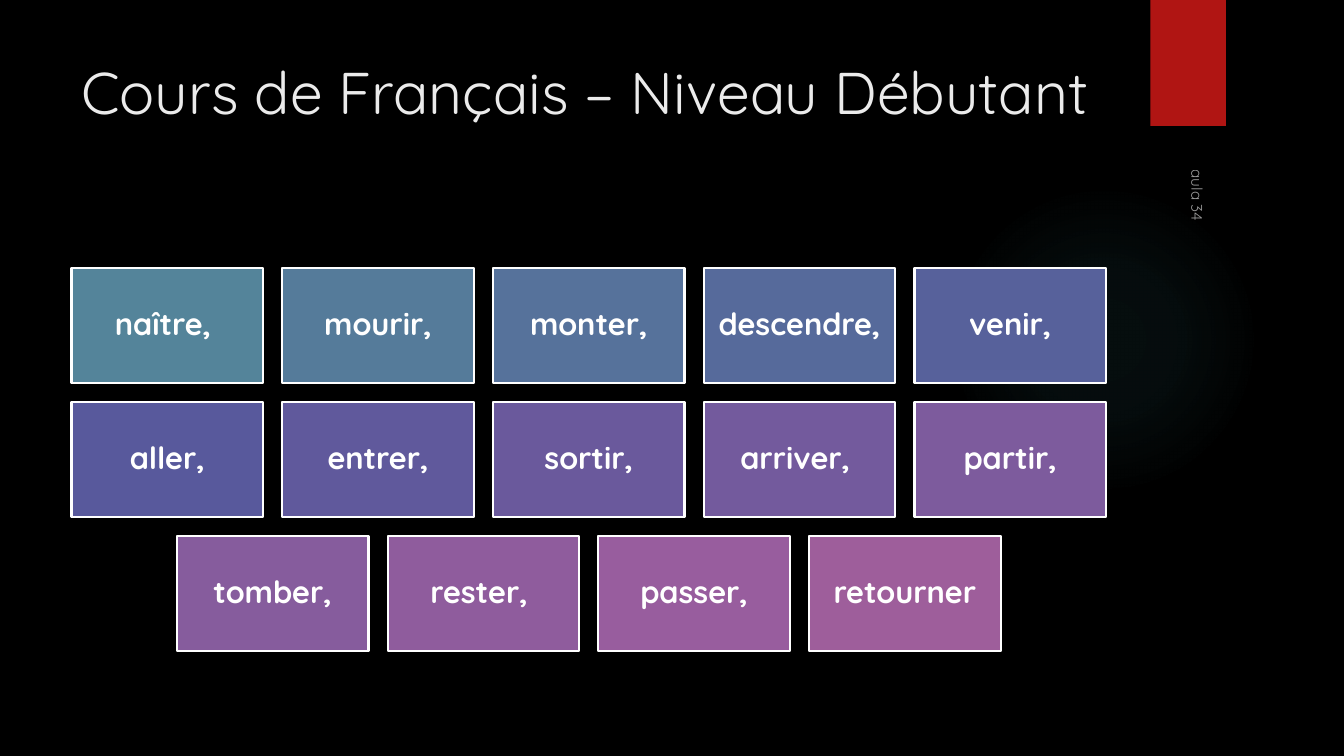
from lxml import etree
from pptx import Presentation
from pptx.dml.color import RGBColor
from pptx.enum.shapes import MSO_SHAPE
from pptx.enum.text import MSO_ANCHOR, PP_ALIGN
from pptx.oxml import parse_xml
from pptx.oxml.ns import nsdecls, qn
from pptx.util import Inches, Pt

COLORS = {"background": "000000", "glow": "50B9C1", "ribbon": "B01513",
          "title": "EBEBEB", "white": "FFFFFF"}
FONT = "Quicksand"

# Verbs with their card colours, row by row
VERB_ROWS = [
    {"naître, ": "54849A", "mourir,": "557B9A", "monter,": "56729B",
     "descendre,": "566A9B", "venir,": "57619B"},
    {"aller,": "58599C", "entrer,": "60599C", "sortir,": "6A599C",
     "arriver, ": "735A9D", "partir,": "7D5B9D"},
    {"tomber,": "865C9D", "rester, ": "8F5C9D", "passer,": "985D9E",
     "retourner": "9E5E9B"},
]
CARD_WIDTH, CARD_HEIGHT, GAP = 1.9, 1.14, 0.19
GRID_LEFT, GRID_TOP, COLUMNS = 0.71, 2.66, 5


def add_block(kind, left, top, width, height, color):
    block = slide.shapes.add_shape(kind, Inches(left), Inches(top),
                                   Inches(width), Inches(height))
    block.shadow.inherit = False
    block.fill.solid()
    block.fill.fore_color.rgb = RGBColor.from_string(color)
    block.line.fill.background()
    return block


def write(shape, text, size, color, anchor, bold=False):
    frame = shape.text_frame
    frame.word_wrap = True
    frame.vertical_anchor = anchor
    paragraph = frame.paragraphs[0]
    paragraph.text = text
    paragraph.font.name = FONT
    paragraph.font.size = Pt(size)
    paragraph.font.bold = bold
    paragraph.font.color.rgb = RGBColor.from_string(color)
    return paragraph


prs = Presentation()
prs.slide_width, prs.slide_height = Inches(13.33), Inches(7.5)
slide = prs.slides.add_slide(prs.slide_layouts[6])
slide.background.fill.solid()
slide.background.fill.fore_color.rgb = RGBColor.from_string(COLORS["background"])

# Soft glow behind the cards
glow = add_block(MSO_SHAPE.OVAL, 9.41, 1.83, 3.08, 3.08, COLORS["glow"])
stops = "".join(
    f'<a:gs pos="{position * 1000}"><a:srgbClr val="{COLORS["glow"]}">'
    f'<a:alpha val="{opacity * 1000}"/></a:srgbClr></a:gs>'
    for position, opacity in [(0, 7), (36, 6), (69, 0)])
gradient = parse_xml(
    f'<a:gradFill {nsdecls("a")}><a:gsLst>{stops}</a:gsLst><a:path path="circle">'
    '<a:fillToRect l="50000" t="50000" r="50000" b="50000"/></a:path></a:gradFill>')
glow_properties = glow.element.spPr
glow_properties.replace(glow_properties.find(qn("a:solidFill")), gradient)

# Red ribbon
add_block(MSO_SHAPE.RECTANGLE, 11.41, 0, 0.75, 1.25, COLORS["ribbon"])

# Title
title = slide.shapes.add_textbox(Inches(0.71), Inches(0.5), Inches(10.29), Inches(1.53))
write(title, "Cours de Français – Niveau Débutant", 42, COLORS["title"], MSO_ANCHOR.TOP)

# Lesson label, turned on its side
lesson = slide.shapes.add_textbox(Inches(9.79), Inches(3.53), Inches(4.22), Inches(0.33))
lesson.rotation = 90
label = write(lesson, "aula 34", 11, COLORS["white"], MSO_ANCHOR.BOTTOM)
for label_color in label._p.iter(qn("a:srgbClr")):
    etree.SubElement(label_color, qn("a:alpha"), val="60000")

# Verb cards, each row centred on the grid
for row, verbs in enumerate(VERB_ROWS):
    top = GRID_TOP + row * (CARD_HEIGHT + GAP)
    row_left = GRID_LEFT + (COLUMNS - len(verbs)) * (CARD_WIDTH + GAP) / 2
    for column, (verb, color) in enumerate(verbs.items()):
        left = row_left + column * (CARD_WIDTH + GAP)
        card = add_block(MSO_SHAPE.RECTANGLE, left, top, CARD_WIDTH, CARD_HEIGHT, color)
        card.line.color.rgb = RGBColor.from_string(COLORS["white"])
        card.line.width = Pt(1.5)
        frame = card.text_frame
        frame.margin_left = frame.margin_right = Inches(0.09)
        frame.margin_top = frame.margin_bottom = Inches(0.09)
        caption = write(card, verb, 22, COLORS["white"], MSO_ANCHOR.MIDDLE, bold=True)
        caption.alignment = PP_ALIGN.CENTER
        caption.line_spacing = 0.9

prs.save("out.pptx")
